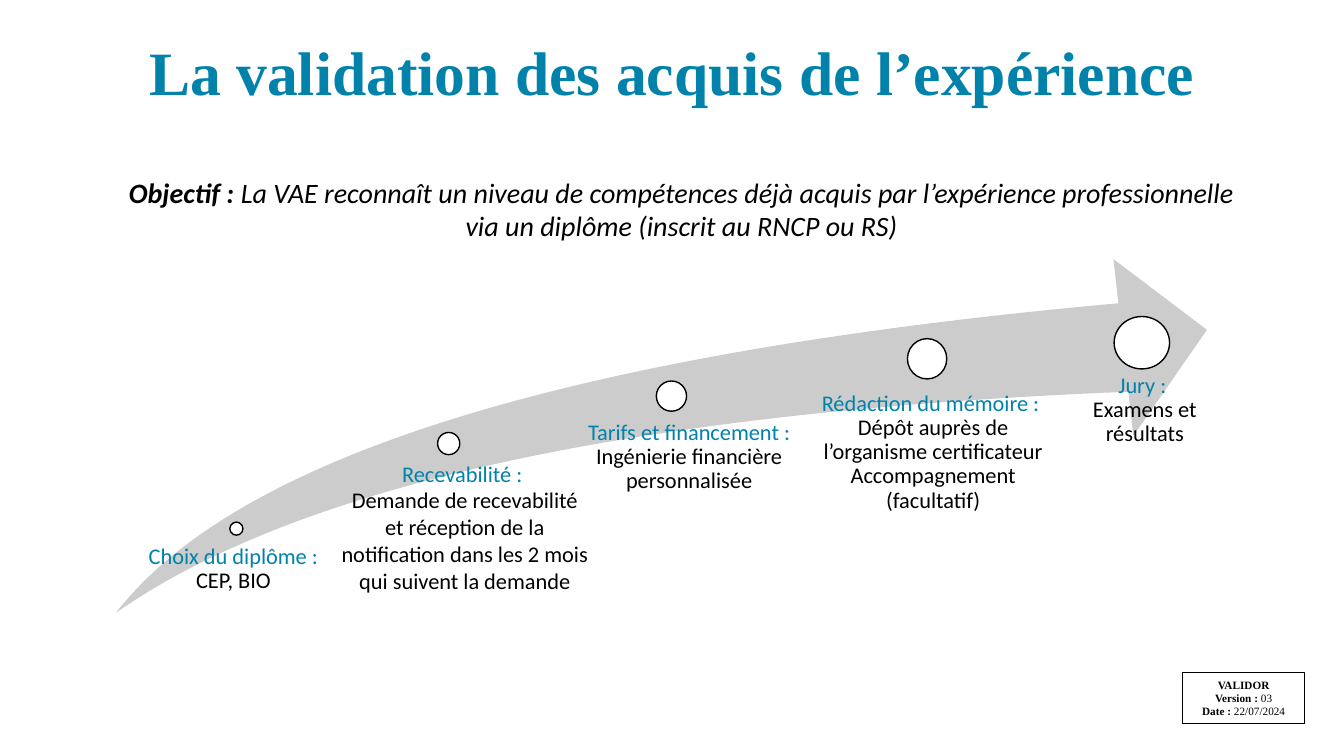
"""Build the slide on the steps of the validation of acquired experience (VAE)."""
from pptx import Presentation, util as u
from pptx.dml.color import RGBColor
from pptx.enum import shapes, text

BLUE, BLACK, WHITE, GREY = "0082AA", "000000", "FFFFFF", "CCCCCC"

presentation = Presentation()
presentation.slide_width = u.Inches(13.33)
presentation.slide_height = u.Inches(7.5)
slide = presentation.slides.add_slide(presentation.slide_layouts[5])


def add_run(paragraph, words, size, color, font="Calibri", bold=False, italic=False):
    run = paragraph.add_run()
    run.text = words
    run.font.size = u.Pt(size)
    run.font.name = font
    run.font.bold = bold
    run.font.italic = italic
    run.font.color.rgb = RGBColor.from_string(color)
    paragraph.alignment = text.PP_ALIGN.CENTER


def add_shape(kind, box, fill, line_width=0):
    shape = slide.shapes.add_shape(kind, *map(u.Inches, box))
    shape.shadow.inherit = False
    shape.fill.solid()
    shape.fill.fore_color.rgb = RGBColor.from_string(fill)
    if line_width:
        shape.line.color.rgb = RGBColor.from_string(BLACK)
        shape.line.width = u.Pt(line_width)
    else:
        shape.line.fill.background()
    return shape


title = slide.shapes.title
title.left, title.top, title.width, title.height = map(u.Inches, (0.92, 0.02, 11.5, 1.45))
title.text_frame.vertical_anchor = text.MSO_ANCHOR.MIDDLE
paragraph = title.text_frame.paragraphs[0]
paragraph.line_spacing = 0.9
add_run(paragraph, "La validation des acquis de l’expérience", 44, BLUE, "Times New Roman", bold=True)

objective = slide.shapes.add_textbox(*map(u.Inches, (1.01, 1.69, 11.5, 0.77)))
objective.text_frame.word_wrap = True
paragraph = objective.text_frame.paragraphs[0]
add_run(paragraph, "Objectif : ", 20, BLACK, bold=True, italic=True)
add_run(paragraph, "La VAE reconnaît un niveau de compétences déjà acquis par l’expérience "
        "professionnelle via un diplôme (inscrit au RNCP ou RS)", 20, BLACK, italic=True)

arrow = add_shape(shapes.MSO_SHAPE.SWOOSH_ARROW, (1.15, 2.57, 10.82, 3.51), GREY)
arrow.adjustments[0] = 0.25
arrow.adjustments[1] = 0.25

steps = [
    ((2.28, 5.18, 0.13, 0.13), (1.37, 5.41, 1.82, 0.52), 0.07,
     [(0.9, [("Choix du diplôme : ", BLUE), ("CEP, BIO", BLACK)])]),
    ((4.34, 4.29, 0.22, 0.22), (3.26, 4.56, 2.58, 1.52), 0.12,
     [(1, [("Recevabilité : ", BLUE)]),
      (1, [("Demande de recevabilité et réception de la notification dans les 2 mois "
            "qui suivent la demande", BLACK)])]),
    ((6.51, 3.78, 0.3, 0.3), (5.51, 4.18, 2.49, 1.05), 0.16,
     [(0.9, [("Tarifs et financement :", BLUE), (" Ingénierie financière personnalisée", BLACK)])]),
    ((9, 3.36, 0.39, 0.4), (7.89, 3.89, 2.52, 1.26), 0.21,
     [(0.9, [("Rédaction du mémoire : ", BLUE)]),
      (0.9, [("Dépôt auprès de l’organisme certificateur Accompagnement (facultatif)", BLACK)])]),
    ((11.05, 3.14, 0.55, 0.52), (10.41, 3.68, 1.82, 0.84), 0.07,
     [(1, [("Jury : ", BLUE)]), (0.9, [("Examens et résultats", BLACK)])]),
]
for dot_box, label_box, inset, paragraphs in steps:
    add_shape(shapes.MSO_SHAPE.OVAL, dot_box, WHITE, 1)
    frame = slide.shapes.add_textbox(*map(u.Inches, label_box)).text_frame
    frame.word_wrap = True
    frame.margin_left = u.Inches(inset)
    frame.margin_top = frame.margin_right = frame.margin_bottom = 0
    for index, (spacing, runs) in enumerate(paragraphs):
        paragraph = frame.add_paragraph() if index else frame.paragraphs[0]
        paragraph.line_spacing = spacing
        for words, color in runs:
            add_run(paragraph, words, 16, color)

stamp = add_shape(shapes.MSO_SHAPE.RECTANGLE, (11.73, 6.67, 1.21, 0.51), WHITE, 0.5)
frame = stamp.text_frame
frame.vertical_anchor = text.MSO_ANCHOR.MIDDLE
stamp_lines = [("VALIDOR", ""), ("Version :", " 03"), ("Date : ", "22/07/2024")]
for index, (label, value) in enumerate(stamp_lines):
    paragraph = frame.add_paragraph() if index else frame.paragraphs[0]
    add_run(paragraph, label, 8, BLACK, "Times New Roman", bold=True)
    if value:
        add_run(paragraph, value, 8, BLACK, "Times New Roman")

presentation.save("out.pptx")
